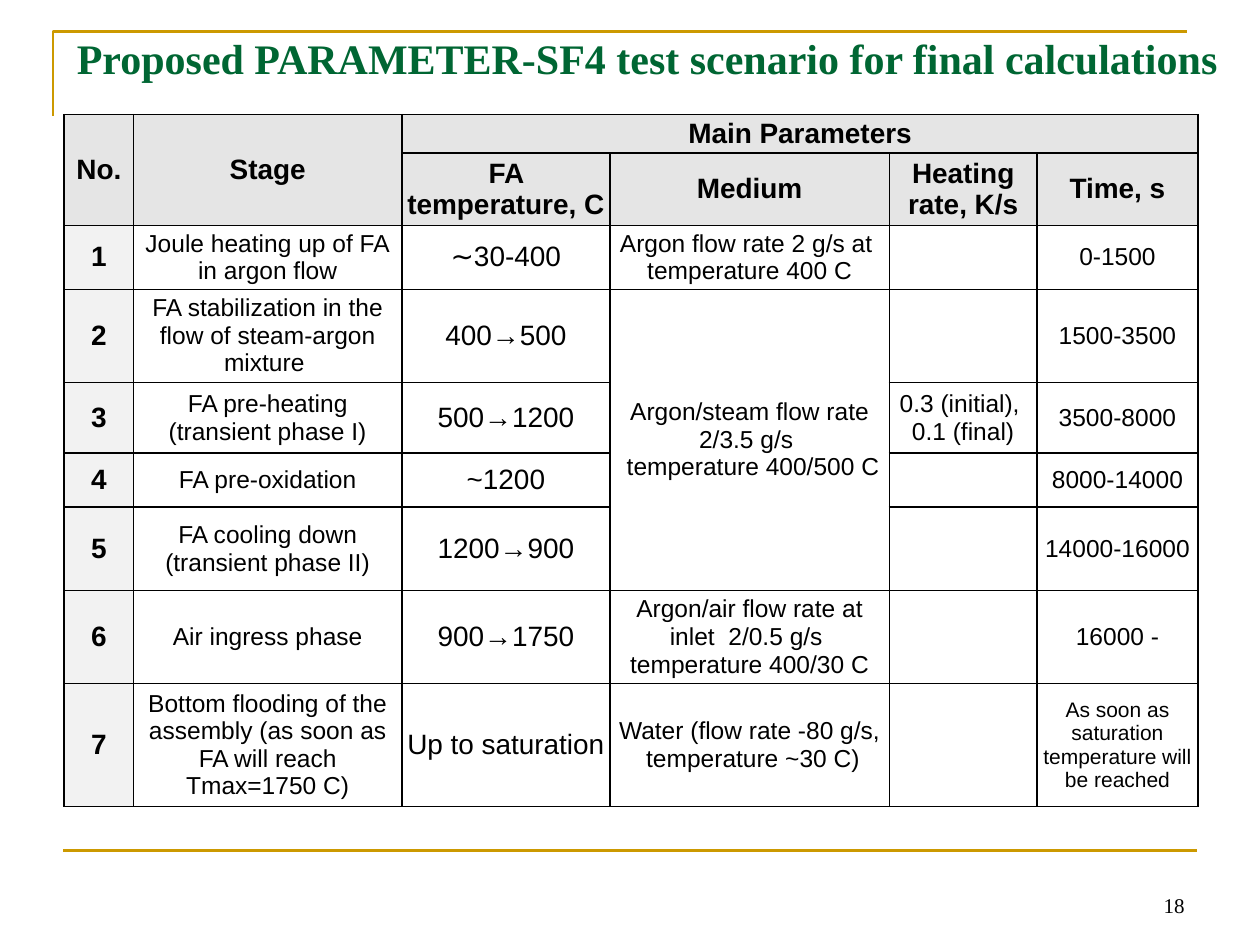
from pptx import Presentation
from pptx.dml.color import RGBColor
from pptx.enum.shapes import MSO_CONNECTOR
from pptx.enum.text import MSO_ANCHOR, PP_ALIGN
from pptx.oxml import parse_xml
from pptx.oxml.ns import nsdecls
from pptx.util import Inches, Pt
from lxml.etree import SubElement
from pptx.oxml.ns import qn

GOLD = "CC9900"
GREEN = "006633"
BLACK = "000000"
HEADER_GREY = "E5E5E5"
NUMBER_GREY = "F2F2F2"

COLUMN_WIDTHS = [0.55, 2.13, 1.65, 2.22, 1.17, 1.28]
ROW_HEIGHTS = [0.29, 0.53, 0.48, 0.7, 0.56, 0.43, 0.66, 0.7, 0.91]
BODY_SIZES = [16, 14, 16, 14, 14, 14]
HEADER_ROWS = 2
MERGES = [((0, 0), (1, 0)), ((0, 1), (1, 1)), ((0, 2), (0, 5)), ((3, 3), (6, 3))]

SCENARIO = [
    ["No.", "Stage", "Main Parameters", "", "", ""],
    ["", "", "FA temperature, C", "Medium", "Heating rate, K/s", "Time, s"],
    ["1", "Joule heating up of FA\n in argon flow ", "∼30-400",
     "Argon flow rate 2 g/s at \vtemperature 400 C", "", "0-1500"],
    ["2", "FA stabilization in the flow of steam-argon mixture ", "400→500",
     "Argon/steam flow rate 2/3.5 g/s \n temperature 400/500 C", "", "1500-3500"],
    ["3", "FA pre-heating (transient phase I)", "500→1200", "",
     "0.3 (initial), \v0.1 (final)", "3500-8000"],
    ["4", "FA pre-oxidation", "~1200", "", "", "8000-14000"],
    ["5", "FA cooling down (transient phase II)", "1200→900", "", "", "14000-16000"],
    ["6", "Air ingress phase", "900→1750",
     "Argon/air flow rate at inlet  2/0.5 g/s \ntemperature 400/30 C", "", "16000 -"],
    ["7", "Bottom flooding of the assembly (as soon as FA will reach Tmax=1750 C)",
     "Up to saturation", "Water (flow rate -80 g/s,\n temperature ~30 C)", "",
     "As soon as saturation temperature will be reached"],
]


def rgb(hex_color):
    return RGBColor.from_string(hex_color)


def format_text(frame, size, font_name, color, align, bold=False):
    for paragraph in frame.paragraphs:
        paragraph.alignment = align
        font = paragraph.font
        font.size, font.name, font.bold = Pt(size), font_name, bold
        font.color.rgb = rgb(color)


def style_rule(rule):
    rule.line.color.rgb = rgb(GOLD)
    rule.line.width = Pt(1.5)


def add_corner_rule(slide):
    builder = slide.shapes.build_freeform(Inches(0.42), Inches(0.92))
    builder.add_line_segments(
        [(Inches(0.42), Inches(0.25)), (Inches(9.42), Inches(0.25))], close=False)
    corner_rule = builder.convert_to_shape()
    corner_rule.shadow.inherit = False
    corner_rule.fill.background()
    style_rule(corner_rule)


def add_footer_rule(slide):
    footer_rule = slide.shapes.add_connector(
        MSO_CONNECTOR.STRAIGHT, Inches(0.5), Inches(6.75), Inches(9.5), Inches(6.75))
    style_rule(footer_rule)
    SubElement(footer_rule._element.spPr, qn("a:effectLst"))


def add_page_number(slide):
    page_number = slide.shapes.add_textbox(
        Inches(7.17), Inches(6.83), Inches(2.33), Inches(0.5))
    frame = page_number.text_frame
    frame.word_wrap = True
    frame.vertical_anchor = MSO_ANCHOR.BOTTOM
    frame.text = "18"
    format_text(frame, 12, "Times New Roman", BLACK, PP_ALIGN.RIGHT)


def set_title(slide):
    title = slide.shapes.title
    title.left, title.top = Inches(0.51), Inches(0.21)
    title.width, title.height = Inches(9.29), Inches(0.69)
    frame = title.text_frame
    frame.vertical_anchor = MSO_ANCHOR.TOP
    frame.text = "Proposed PARAMETER-SF4 test scenario for final calculations"
    format_text(frame, 24, "Times New Roman", GREEN, PP_ALIGN.LEFT, bold=True)


def add_borders(cell):
    properties = cell._tc.get_or_add_tcPr()
    for position, side in enumerate(("lnL", "lnR", "lnT", "lnB")):
        properties.insert(position, parse_xml(
            f'<a:{side} {nsdecls("a")} w="{Pt(1)}"><a:solidFill>'
            f'<a:srgbClr val="{BLACK}"/></a:solidFill></a:{side}>'))


def format_cell(cell, row, column):
    is_header = row < HEADER_ROWS
    is_last_time = row == len(SCENARIO) - 1 and column == 5
    size = 16 if is_header else 12 if is_last_time else BODY_SIZES[column]
    cell.margin_left = cell.margin_right = Inches(0.02)
    cell.margin_top = cell.margin_bottom = Inches(0.02)
    cell.vertical_anchor = MSO_ANCHOR.MIDDLE
    if is_header or column == 0:
        cell.fill.solid()
        cell.fill.fore_color.rgb = rgb(HEADER_GREY if is_header else NUMBER_GREY)
    else:
        cell.fill.background()
    add_borders(cell)
    format_text(cell.text_frame, size, "Arial", BLACK, PP_ALIGN.CENTER,
                bold=is_header or column == 0)


def add_scenario_table(slide):
    table = slide.shapes.add_table(
        len(ROW_HEIGHTS), len(COLUMN_WIDTHS), Inches(0.51), Inches(0.91),
        Inches(sum(COLUMN_WIDTHS)), Inches(sum(ROW_HEIGHTS))).table
    table.first_row = table.horz_banding = False
    for column, width in zip(table.columns, COLUMN_WIDTHS):
        column.width = Inches(width)
    for row, height in zip(table.rows, ROW_HEIGHTS):
        row.height = Inches(height)
    for row, texts in enumerate(SCENARIO):
        for column, text in enumerate(texts):
            cell = table.cell(row, column)
            if text:
                cell.text_frame.text = text
            format_cell(cell, row, column)
    for first, last in MERGES:
        table.cell(*first).merge(table.cell(*last))


def main():
    presentation = Presentation()
    presentation.slide_width, presentation.slide_height = Inches(10), Inches(7.5)
    slide = presentation.slides.add_slide(presentation.slide_layouts[5])
    add_corner_rule(slide)
    add_footer_rule(slide)
    add_page_number(slide)
    set_title(slide)
    add_scenario_table(slide)
    presentation.save("out.pptx")


if __name__ == "__main__":
    main()
